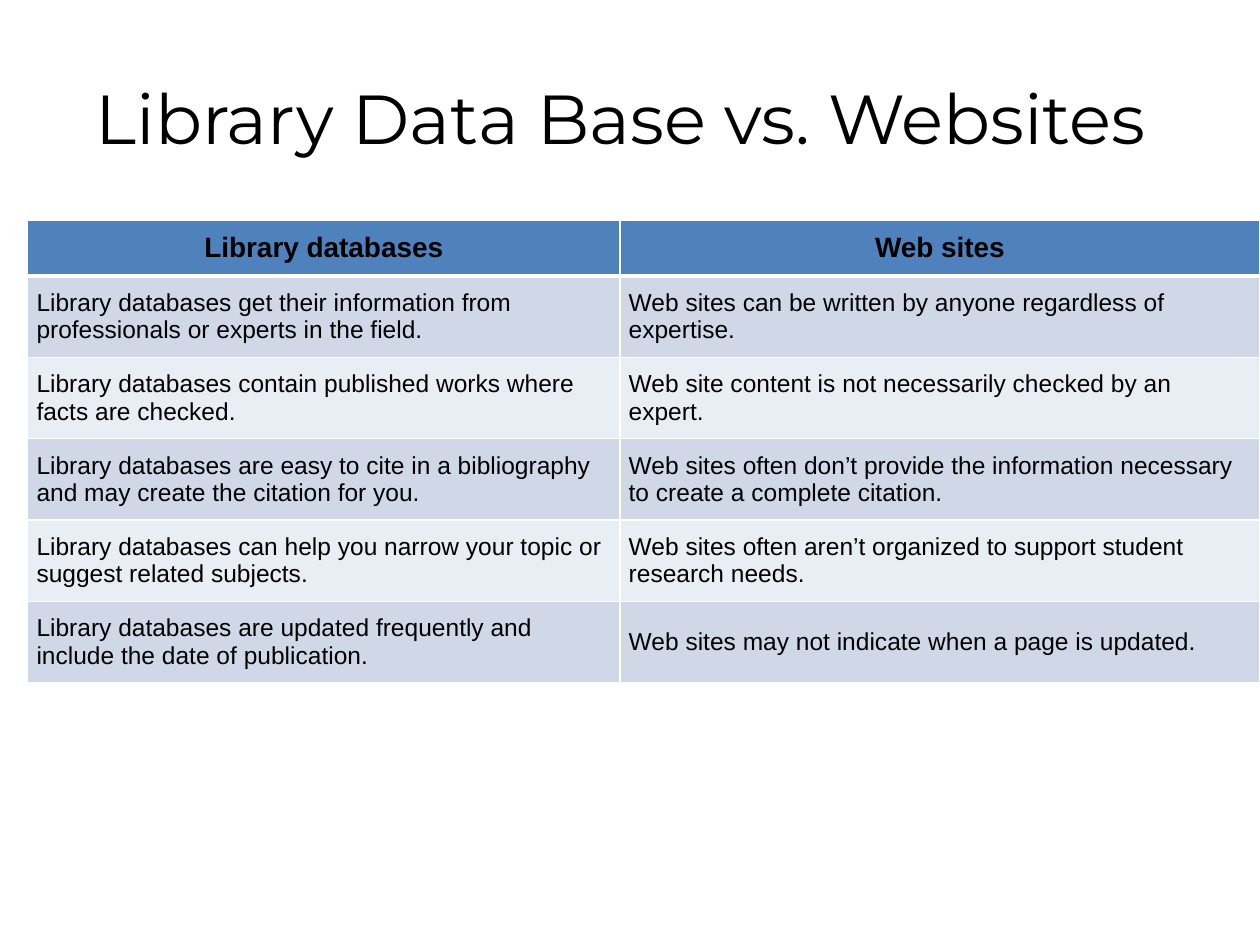
from dataclasses import dataclass

import pptx
import pptx.dml.color
import pptx.enum.text
import pptx.oxml.ns
import pptx.util
from lxml import etree

Inches, Pt = pptx.util.Inches, pptx.util.Pt
RGBColor = pptx.dml.color.RGBColor
PP_ALIGN = pptx.enum.text.PP_ALIGN
MIDDLE = pptx.enum.text.MSO_ANCHOR.MIDDLE
qn = pptx.oxml.ns.qn

BLACK = RGBColor(0x00, 0x00, 0x00)
WHITE = RGBColor(0xFF, 0xFF, 0xFF)
HEADER = RGBColor(0x4F, 0x81, 0xBD)
BANDS = (RGBColor(0xD0, 0xD8, 0xE8), RGBColor(0xE9, 0xED, 0xF4))

TITLE_FONT = {"name": "Montserrat", "size": Pt(39.6), "bold": False}
HEADER_FONT = {"name": "Arial", "size": Pt(16), "bold": True}
BODY_FONT = {"name": "Arial", "size": Pt(14), "bold": False}
MARGINS = ("margin_left", "margin_top", "margin_right", "margin_bottom")


@dataclass
class Comparison:
    database: str
    website: str


HEADINGS = Comparison("Library databases", "Web sites")
COMPARISONS = [
    Comparison("Library databases get their information from professionals or experts in the field.",
               "Web sites can be written by anyone regardless of expertise."),
    Comparison("Library databases contain published works where facts are checked.",
               "Web site content is not necessarily checked by an expert."),
    Comparison("Library databases are easy to cite in a bibliography and may create the citation for you.",
               "Web sites often don’t provide the information necessary to create a complete citation."),
    Comparison("Library databases can help you narrow your topic or suggest related subjects.",
               "Web sites often aren’t organized to support student research needs."),
    Comparison("Library databases are updated frequently and include the date of publication.",
               "Web sites may not indicate when a page is updated."),
]
COLUMN_WIDTHS = (Inches(4.7), Inches(5.08))
HEADER_HEIGHT = Inches(0.44)
BODY_HEIGHT = Inches(3.23)


def write_text(tf, text: str, font: dict, align) -> None:
    p = tf.paragraphs[0]
    p.alignment = align
    r = p.add_run()
    r.text = text
    for name, value in font.items():
        setattr(r.font, name, value)
    r.font.color.rgb = BLACK


def set_borders(cell, bottom: float) -> None:
    tc_pr = cell._tc.get_or_add_tcPr()
    widths = {"a:lnL": 1, "a:lnR": 1, "a:lnT": 1, "a:lnB": bottom}
    for i, (tag, width) in enumerate(widths.items()):
        ln = etree.Element(qn(tag), w=str(Pt(width)))
        fill = etree.SubElement(ln, qn("a:solidFill"))
        etree.SubElement(fill, qn("a:srgbClr"), val=str(WHITE))
        tc_pr.insert(i, ln)


def fill_row(table, index: int, row: Comparison, font: dict, fill: RGBColor,
             align, bottom: float = 1) -> None:
    for cell, text in zip(table.rows[index].cells, (row.database, row.website)):
        cell.vertical_anchor = MIDDLE
        for margin in MARGINS:
            setattr(cell, margin, Inches(0.07))
        cell.fill.solid()
        cell.fill.fore_color.rgb = fill
        set_borders(cell, bottom)
        write_text(cell.text_frame, text, font, align)


def main() -> None:
    prs = pptx.Presentation()
    prs.slide_width, prs.slide_height = Inches(10), Inches(7.5)
    s = prs.slides.add_slide(prs.slide_layouts[6])

    # Title
    sp = s.shapes.add_textbox(Inches(0.5), Inches(0.3), Inches(9), Inches(1.25))
    tf = sp.text_frame
    tf.word_wrap = True
    tf.vertical_anchor = MIDDLE
    write_text(tf, "Library Data Base vs. Websites ", TITLE_FONT, PP_ALIGN.CENTER)

    # Comparison table
    table = s.shapes.add_table(len(COMPARISONS) + 1, len(COLUMN_WIDTHS),
                               Inches(0.22), Inches(1.75), sum(COLUMN_WIDTHS),
                               HEADER_HEIGHT + BODY_HEIGHT).table
    for column, width in zip(table.columns, COLUMN_WIDTHS):
        column.width = width
    table.rows[0].height = HEADER_HEIGHT
    fill_row(table, 0, HEADINGS, HEADER_FONT, HEADER, PP_ALIGN.CENTER, bottom=3)
    for i, row in enumerate(COMPARISONS):
        table.rows[i + 1].height = BODY_HEIGHT // len(COMPARISONS)
        # The header's thick rule is also the first body row's top border
        fill_row(table, i + 1, row, BODY_FONT, BANDS[i % 2], PP_ALIGN.LEFT)
    for cell in table.rows[1].cells:
        cell._tc.tcPr.find(qn("a:lnT")).set("w", str(Pt(3)))

    prs.save("out.pptx")


if __name__ == "__main__":
    main()
